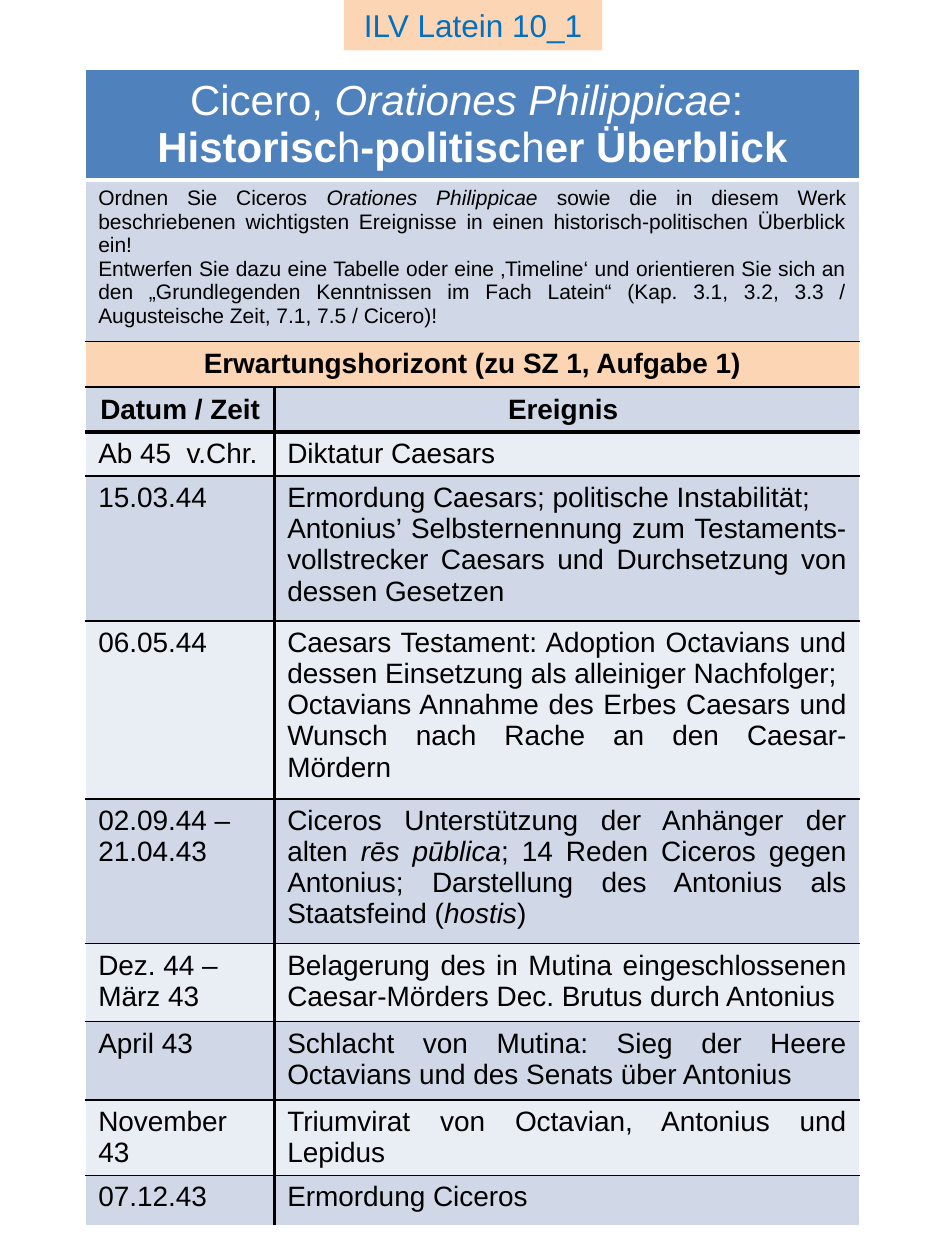
from dataclasses import dataclass

from lxml.etree import SubElement
from pptx import Presentation
from pptx.dml.color import RGBColor as Rgb
from pptx.enum.shapes import MSO_SHAPE as Preset
from pptx.enum.text import MSO_ANCHOR as Anchor, MSO_AUTO_SIZE as AutoSize, PP_ALIGN as Align
from pptx.oxml.ns import qn
from pptx.util import Inches, Pt


@dataclass(frozen=True)
class Theme:
    font: str = "Arial"
    black: str = "000000"
    white: str = "FFFFFF"
    blue: str = "4F81BD"
    peach: str = "FCD5B5"
    label: str = "0070C0"
    bands: tuple = ("E9EDF4", "D0D8E8")
    title: int = 24
    tag: int = 18
    body: int = 16
    task: int = 12
    thin: float = 1
    thick: float = 2.25
    heavy: float = 3
    hang: float = 0.2


class Sheet:
    columns, rows = 75, 100

    def __init__(self, theme, width, height):
        self.theme = theme
        self.deck = Presentation()
        self.deck.slide_width, self.deck.slide_height = Inches(width), Inches(height)
        self.slide = self.deck.slides.add_slide(self.deck.slide_layouts[6])

    def across(self, columns):
        return round(self.deck.slide_width * columns / self.columns)

    def down(self, rows):
        return round(self.deck.slide_height * rows / self.rows)

    def text(self, frame, lines, size, color, align, hang=False, bold=False, strong_line=None):
        for number, line in enumerate(lines):
            paragraph = frame.paragraphs[0] if number == 0 else frame.add_paragraph()
            paragraph.alignment = align
            if hang:
                indent = Inches(self.theme.hang)
                properties = paragraph._p.get_or_add_pPr()
                properties.set("marL", str(indent))
                properties.set("indent", str(-indent))
            for index, part in enumerate(line.split("*")):
                marked, strong = index % 2 == 1, number == strong_line
                for piece_index, piece in enumerate(part.split("\n")):
                    if piece_index:
                        paragraph.add_line_break()
                    if piece:
                        run = paragraph.add_run()
                        run.text = piece
                        font = run.font
                        font.name, font.size = self.theme.font, Pt(size)
                        font.color.rgb = Rgb.from_string(color)
                        font.bold = bold or (marked and strong)
                        font.italic = marked and not strong

    def tag(self, left, top, width, height, label):
        box = self.slide.shapes.add_shape(
            Preset.RECTANGLE, self.across(left), self.down(top), self.across(width), self.down(height))
        box.shadow.inherit = False
        box.fill.solid()
        box.fill.fore_color.rgb = Rgb.from_string(self.theme.peach)
        box.line.fill.background()
        box.text_frame.word_wrap = True
        box.text_frame.auto_size = AutoSize.SHAPE_TO_FIT_TEXT
        self.text(box.text_frame, [label], self.theme.tag, self.theme.label, Align.CENTER)

    def table(self, left, top, widths, heights):
        grid = self.slide.shapes.add_table(
            len(heights), len(widths), self.across(left), self.down(top),
            self.across(sum(widths)), self.down(sum(heights))).table
        grid.first_row = grid.horz_banding = False
        for column, width in zip(grid.columns, widths):
            column.width = self.across(width)
        for row, height in zip(grid.rows, heights):
            row.height = self.down(height)
        return grid

    def cell(self, cell, fill, borders, anchor):
        properties = cell._tc.get_or_add_tcPr()
        for side in "LRTB":
            if side in borders:
                color, width = borders[side]
                line = SubElement(properties, qn(f"a:ln{side}"), w=str(Pt(width)))
                SubElement(SubElement(line, qn("a:solidFill")), qn("a:srgbClr"), val=color)
        cell.fill.solid()
        cell.fill.fore_color.rgb = Rgb.from_string(fill)
        cell.vertical_anchor = anchor

    def banner(self, grid, row, lines, fill, borders, size, color, align, anchor=Anchor.MIDDLE, **style):
        first, last = grid.cell(row, 0), grid.cell(row, 1)
        first.merge(last)
        for cell in (first, last):
            self.cell(cell, fill, borders, anchor)
        self.text(first.text_frame, lines, size, color, align, **style)

    def pair(self, grid, row, entries, fill, above, below, aligns, hangs, anchor=Anchor.TOP, bold=False):
        theme = self.theme
        ruled = {side: (theme.black, width) for side, width in (("T", above), ("B", below)) if width}
        for column, inner in enumerate("RL"):
            cell = grid.cell(row, column)
            self.cell(cell, fill, {**ruled, inner: (theme.black, theme.thick)}, anchor)
            self.text(cell.text_frame, entries[column], theme.body, theme.black,
                      aligns[column], hangs[column], bold)


TITLE = ["Cicero, *Orationes Philippicae*: ", "*Historisc*h*-politisc*h*er Überblick*"]
TASK = [
    "Ordnen Sie Ciceros *Orationes Philippicae* sowie die in diesem Werk beschriebenen "
    "wichtigsten Ereignisse in einen historisch-politischen Überblick ein!",
    "Entwerfen Sie dazu eine Tabelle oder eine ‚Timeline‘ und orientieren Sie sich an den "
    "„Grundlegenden Kenntnissen im Fach Latein“ (Kap. 3.1, 3.2, 3.3 / Augusteische Zeit, 7.1, 7.5 / Cicero)!",
]
EVENTS = [
    (3.5, ["Ab 45  v.Chr."], ["Diktatur Caesars"]),
    (11.5, ["15.03.44"], [
        "Ermordung Caesars; politische Instabilität;",
        "Antonius’ Selbsternennung zum Testaments-\nvollstrecker Caesars und Durchsetzung von dessen Gesetzen"]),
    (14.1, ["06.05.44"], [
        "Caesars Testament: Adoption Octavians und dessen Einsetzung als alleiniger Nachfolger; ",
        "Octavians Annahme des Erbes Caesars und Wunsch nach Rache an den Caesar-Mördern"]),
    (11.5, ["02.09.44 – ", "21.04.43"], [
        "Ciceros Unterstützung der Anhänger der alten *rēs pūblica*; 14 Reden Ciceros gegen Antonius; "
        "Darstellung des Antonius als Staatsfeind (*hostis*)"]),
    (6.2, ["Dez. 44 – März 43"], [
        "Belagerung des in Mutina eingeschlossenen Caesar-Mörders Dec. Brutus durch Antonius"]),
    (6.2, ["April 43"], ["Schlacht von Mutina: Sieg der Heere Octavians und des Senats über Antonius"]),
    (6, ["November", "43"], ["Triumvirat von Octavian, Antonius und Lepidus"]),
    (4, ["07.12.43"], ["Ermordung Ciceros"]),
]


def main():
    theme = Theme()
    sheet = Sheet(theme, 7.5, 10)
    heads = [8.8, 12.8, 3.6, 3.6]
    overview = sheet.table(6.8, 5.5, [15, 46.4], heads + [height for height, _, _ in EVENTS])
    white, black = (theme.white, theme.thin), (theme.black, theme.thin)
    frame = dict.fromkeys("LRT", white)

    sheet.banner(overview, 0, TITLE, theme.blue, {**frame, "B": (theme.white, theme.heavy)},
                 theme.title, theme.white, Align.CENTER, strong_line=1)
    sheet.banner(overview, 1, TASK, theme.bands[1], {**frame, "B": black},
                 theme.task, theme.black, Align.JUSTIFY, Anchor.TOP)
    sheet.banner(overview, 2, ["Erwartungshorizont (zu SZ 1, Aufgabe 1)"], theme.peach,
                 {"T": black, "B": black}, theme.body, theme.black, Align.CENTER, hang=True, bold=True)
    sheet.pair(overview, 3, (["Datum / Zeit"], ["Ereignis "]), theme.bands[1], theme.thin, theme.thick,
               (Align.CENTER, Align.CENTER), (True, True), Anchor.MIDDLE, True)

    for index, (_, date, event) in enumerate(EVENTS):
        above = theme.thin if index else theme.thick
        below = theme.thin if index < len(EVENTS) - 1 else None
        wrapped = date[0].startswith("Dez.")
        sheet.pair(overview, len(heads) + index, (date, event), theme.bands[index % 2], above, below,
                   (Align.LEFT if wrapped else Align.JUSTIFY, Align.JUSTIFY), (not wrapped, False))

    sheet.tag(27.3, 0, 20.5, 4, "ILV Latein 10_1")
    sheet.deck.save("out.pptx")


if __name__ == "__main__":
    main()
